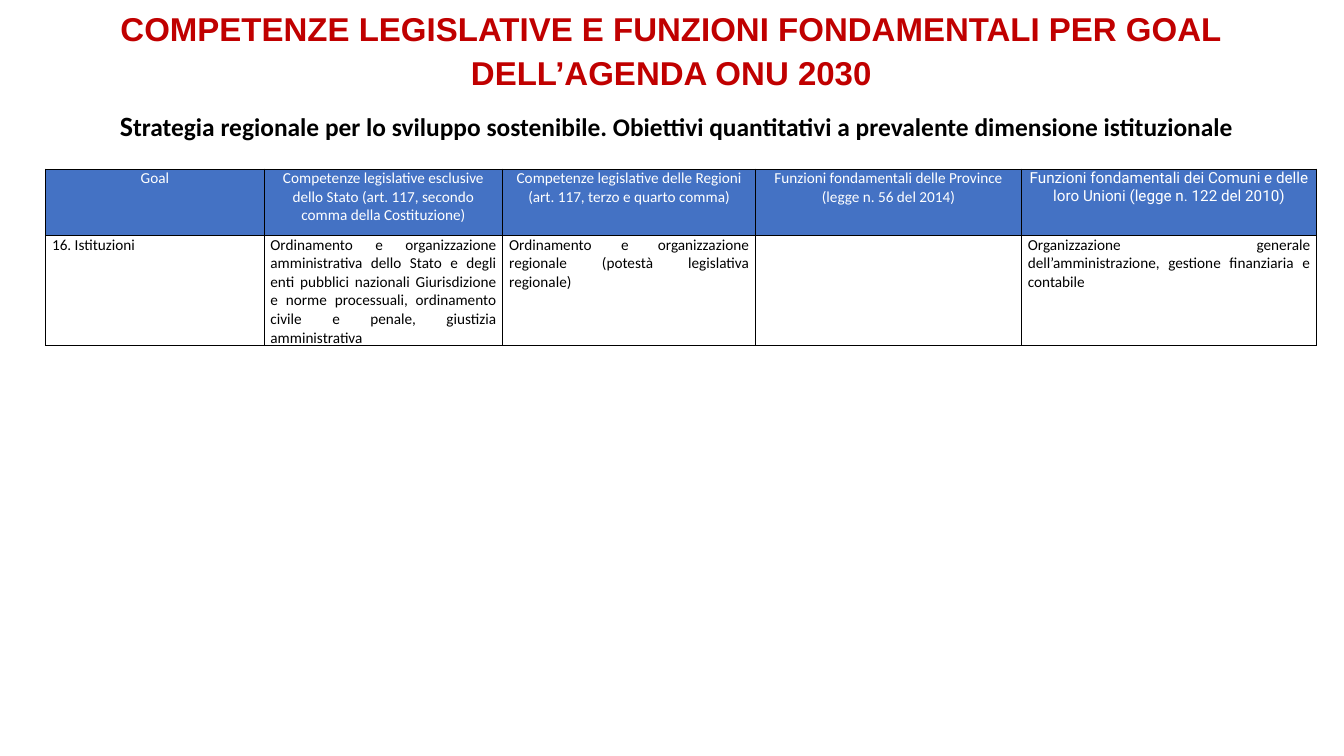
"""Build the slide on legislative competences and functions for Goal 16."""
from lxml.etree import SubElement
from pptx import Presentation
from pptx.dml.color import RGBColor
from pptx.enum.text import MSO_ANCHOR, MSO_AUTO_SIZE, PP_ALIGN as Align
from pptx.oxml.ns import qn
from pptx.util import Pt

RED = RGBColor(0xC0, 0x00, 0x00)
BLACK = RGBColor(0x00, 0x00, 0x00)
WHITE = RGBColor(0xFF, 0xFF, 0xFF)
BLUE = RGBColor(0x44, 0x72, 0xC4)

TITLE = "COMPETENZE LEGISLATIVE E FUNZIONI FONDAMENTALI PER GOAL DELL’AGENDA ONU 2030"
SUBTITLE_INITIAL = "S"
SUBTITLE_REST = (
    "trategia regionale per lo sviluppo sostenibile. "
    "Obiettivi quantitativi a prevalente dimensione istituzionale"
)
HEADINGS = [
    "Goal",
    "Competenze legislative esclusive dello Stato (art. 117, secondo comma della Costituzione)",
    "Competenze legislative delle Regioni (art. 117, terzo e quarto comma)",
    "Funzioni fondamentali delle Province (legge n. 56 del 2014)",
    "Funzioni fondamentali dei Comuni e delle loro Unioni (legge n. 122 del 2010)",
]
INSTITUTIONS = [
    "16. Istituzioni",
    "Ordinamento e organizzazione amministrativa dello Stato e degli enti pubblici nazionali "
    "Giurisdizione e norme processuali, ordinamento civile e penale, giustizia amministrativa",
    "Ordinamento e organizzazione regionale (potestà legislativa regionale)",
    "",
    "Organizzazione generale dell’amministrazione, gestione finanziaria e contabile",
]
COLUMN_WIDTHS = [172, 188, 199, 209.5, 232.5]
ROW_HEIGHTS = [52.5, 72]
HEADING_FONTS = ["Calibri"] * 4 + ["Roboto"]
BODY_FONTS = ["Calibri"] * 5


def write(paragraph, text, font="Calibri", size=12, color=BLACK, bold=False, align=Align.CENTER):
    """Add a formatted run to a paragraph."""
    paragraph.alignment = align
    run = paragraph.add_run()
    run.text = text
    run.font.name = font
    run.font.size = Pt(size)
    run.font.bold = bold
    run.font.color.rgb = color


def draw_borders(cell):
    """Give a cell a thin black line on each side."""
    properties = cell._tc.get_or_add_tcPr()
    for position, side in enumerate(("a:lnL", "a:lnR", "a:lnT", "a:lnB")):
        line = SubElement(properties, qn(side), w=str(Pt(0.96)))
        SubElement(SubElement(line, qn("a:solidFill")), qn("a:srgbClr"), val=str(BLACK))
        properties.insert(position, line)


def main():
    """Create and save the presentation."""
    deck = Presentation()
    deck.slide_width, deck.slide_height = Pt(1058.4), Pt(595.44)
    slide = deck.slides.add_slide(deck.slide_layouts[5])

    title = slide.shapes.title
    title.left, title.top, title.width, title.height = Pt(0), Pt(0), Pt(1057.7), Pt(79.2)
    title.text_frame.vertical_anchor = MSO_ANCHOR.TOP
    title.text_frame.auto_size = MSO_AUTO_SIZE.NONE
    heading = title.text_frame.paragraphs[0]
    heading.line_spacing = 1.1
    heading.space_after = Pt(6)
    write(heading, TITLE, font="Arial", size=26, color=RED, bold=True)

    subtitle = slide.shapes.add_textbox(Pt(13.7), Pt(82), Pt(1036.8), Pt(33.8))
    subtitle.text_frame.word_wrap = True
    strategy = subtitle.text_frame.paragraphs[0]
    strategy.space_after = Pt(6)
    strategy._p.get_or_add_pPr().set("marL", str(Pt(1.44)))
    write(strategy, SUBTITLE_INITIAL, size=22, bold=True)
    write(strategy, SUBTITLE_REST, size=20, bold=True)

    goals = slide.shapes.add_table(
        len(ROW_HEIGHTS), len(COLUMN_WIDTHS), Pt(36), Pt(133.2),
        Pt(sum(COLUMN_WIDTHS)), Pt(sum(ROW_HEIGHTS)),
    ).table
    goals.first_row = goals.horz_banding = False
    for column, width in zip(goals.columns, COLUMN_WIDTHS):
        column.width = Pt(width)

    bands = [
        (HEADINGS, HEADING_FONTS, WHITE, Align.CENTER, BLUE),
        (INSTITUTIONS, BODY_FONTS, BLACK, Align.JUSTIFY, None),
    ]
    for row, height, (texts, fonts, color, align, fill) in zip(goals.rows, ROW_HEIGHTS, bands):
        row.height = Pt(height)
        for cell, text, font in zip(row.cells, texts, fonts):
            cell.margin_left = cell.margin_right = Pt(5)
            cell.margin_top = cell.margin_bottom = Pt(0)
            if fill:
                cell.fill.solid()
                cell.fill.fore_color.rgb = fill
            else:
                cell.fill.background()
            draw_borders(cell)
            if text:
                write(cell.text_frame.paragraphs[0], text, font=font, color=color, align=align)

    deck.save("out.pptx")


if __name__ == "__main__":
    main()
